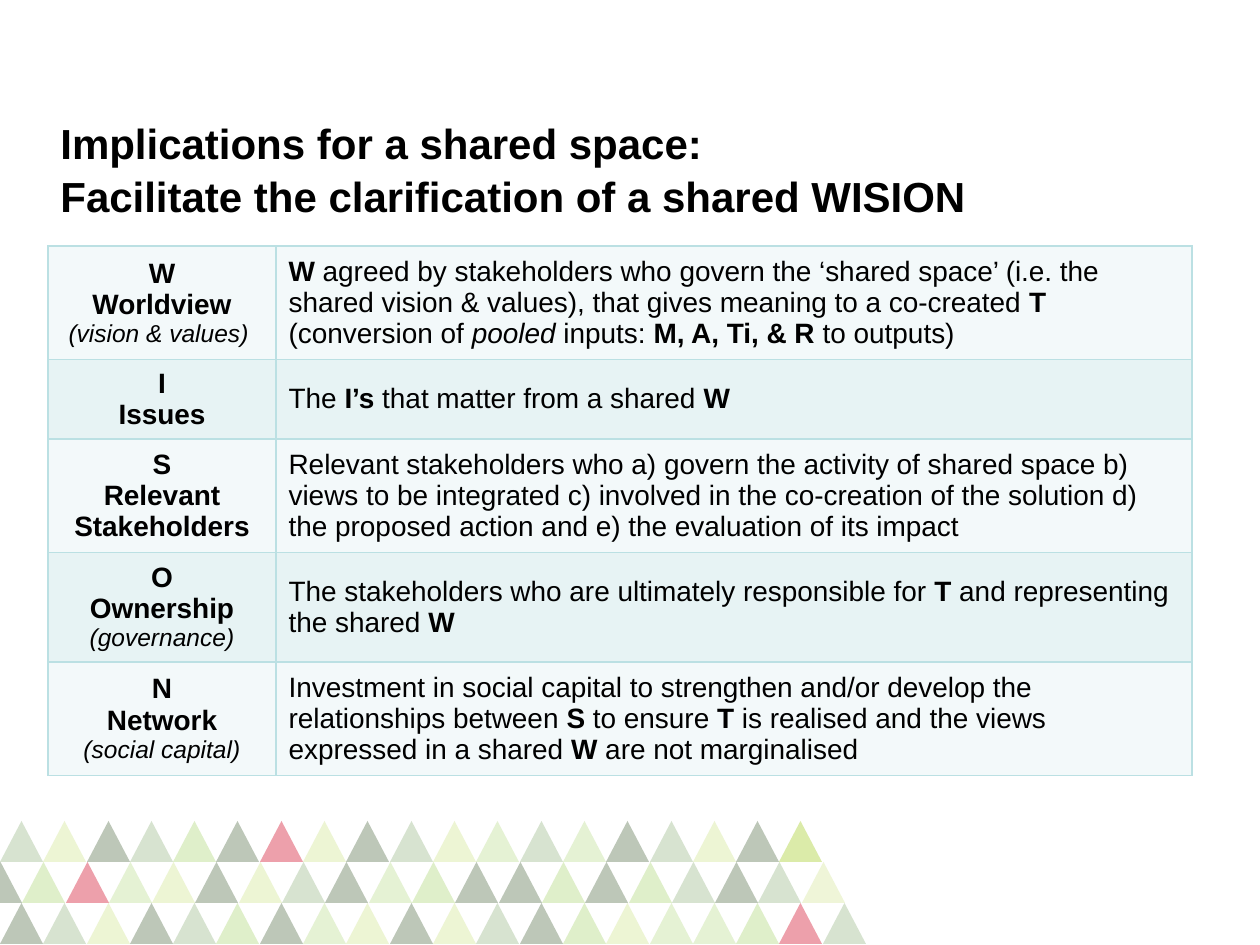
from dataclasses import dataclass
from typing import NamedTuple

from lxml import etree
from pptx import Presentation
from pptx.dml.color import RGBColor
from pptx.enum.shapes import MSO_SHAPE
from pptx.enum.text import MSO_ANCHOR, PP_ALIGN
from pptx.oxml.ns import qn
from pptx.util import Emu, Pt

TRIANGLE = MSO_SHAPE.ISOSCELES_TRIANGLE
MIDDLE = MSO_ANCHOR.MIDDLE
LEFT, CENTER = PP_ALIGN.LEFT, PP_ALIGN.CENTER
PX = 914400 // 126


@dataclass(frozen=True)
class Theme:
    font: str = "Arial"
    ink: str = "000000"
    border: str = "BBE0E3"
    bands: tuple[str, str] = ("F3F9FA", "E7F3F4")
    title: int = 24
    body: int = 16
    note: int = 14


class Tint(NamedTuple):
    color: str
    opacity: int


class Run(NamedTuple):
    text: str
    bold: bool = False
    italic: bool = False


class Row(NamedTuple):
    height: int
    heading: list[str]
    note: str
    runs: list[Run]


THEME = Theme()
TINTS = {
    "D": Tint("264715", 30),
    "M": Tint("4A812C", 22),
    "L": Tint("A7CD28", 20),
    "l": Tint("A7CD28", 18),
    "Y": Tint("A7CD28", 40),
    "G": Tint("81C12C", 25),
    "g": Tint("81C12C", 20),
    "R": Tint("D3122E", 40),
}
# Each row of triangles: left edge in px, then one tint key per triangle
TRIANGLE_ROWS = [
    (0, "MLDMGDRLDMLgMgDMLDY"),
    (-21, "DGRgLDLMDgGDDGDGMDMl"),
    (0, "DMLDMGDgLDLMDGLggGRM"),
]
TITLE = "Implications for a shared space: \vFacilitate the clarification of a shared WISION"
COLUMNS = (228, 916)
ROWS = [
    Row(106, ["W", "Worldview"], "(vision & values) ", [
        Run("W", bold=True),
        Run(" agreed by stakeholders who govern the ‘shared space’ (i.e. the shared "
            "vision & values), that gives meaning to a co-created "),
        Run("T ", bold=True),
        Run("(conversion of "),
        Run("pooled", italic=True),
        Run(" inputs: "),
        Run("M, A, Ti, & R ", bold=True),
        Run("to outputs)"),
    ]),
    Row(75, ["I", "Issues"], "", [
        Run("The "),
        Run("I’s", bold=True),
        Run(" that matter from a shared "),
        Run("W", bold=True),
    ]),
    Row(106, ["S", "Relevant", "Stakeholders"], "", [
        Run("Relevant stakeholders who a) govern the activity of shared space b) views to "
            "be integrated c) involved in the co-creation of the solution d) the proposed "
            "action and e) the evaluation of its impact"),
    ]),
    Row(102, ["O", "Ownership"], "(governance)", [
        Run("The stakeholders who are ultimately responsible for "),
        Run("T", bold=True),
        Run(" and representing the shared "),
        Run("W", bold=True),
    ]),
    Row(106, ["N", "Network"], "(social capital)", [
        Run("Investment in social capital to strengthen and/or develop the relationships "
            "between "),
        Run("S", bold=True),
        Run(" to ensure "),
        Run("T", bold=True),
        Run(" is realised and the views expressed in a shared "),
        Run("W", bold=True),
        Run(" are not marginalised"),
    ]),
]


def px(n: int) -> Emu:
    return Emu(n * PX)


def style(p, size: int, bold=None, italic=None, align=LEFT) -> None:
    p.alignment = align
    f = p.font
    f.name, f.size, f.bold, f.italic = THEME.font, Pt(size), bold, italic
    f.color.rgb = RGBColor.from_string(THEME.ink)


def add_triangle(s, x: int, y: int, tint: Tint) -> None:
    sp = s.shapes.add_shape(TRIANGLE, px(x), px(y), px(43), px(41))
    sp.shadow.inherit = False
    sp.line.fill.background()
    sp.fill.solid()
    sp.fill.fore_color.rgb = RGBColor.from_string(tint.color)
    color = sp.fill._xPr.find(f".//{qn('a:srgbClr')}")
    etree.SubElement(color, qn("a:alpha"), val=str(tint.opacity * 1000))


def add_triangles(s) -> None:
    for i, (left, keys) in enumerate(TRIANGLE_ROWS):
        for j, key in enumerate(keys):
            add_triangle(s, left + round(43.3 * j), 821 + 41 * i, TINTS[key])


def add_title(s) -> None:
    tf = s.shapes.add_textbox(px(48), px(120), px(1164), px(96)).text_frame
    tf.word_wrap = True
    tf.vertical_anchor = MIDDLE
    p = tf.paragraphs[0]
    p.text = TITLE
    p.line_spacing = 1.05
    style(p, THEME.title, bold=True)


def format_cell(cell, fill: str) -> None:
    """Anchor the text in the middle, then draw all four borders and the fill."""
    cell.vertical_anchor = MIDDLE
    tc_pr = cell._tc.get_or_add_tcPr()
    for side in ("lnL", "lnR", "lnT", "lnB"):
        ln = etree.SubElement(tc_pr, qn(f"a:{side}"), w=str(Pt(1)))
        solid = etree.SubElement(ln, qn("a:solidFill"))
        etree.SubElement(solid, qn("a:srgbClr"), val=THEME.border)
    cell.fill.solid()
    cell.fill.fore_color.rgb = RGBColor.from_string(fill)


def write_heading(tf, row: Row) -> None:
    tf.text = "\n".join(row.heading)
    for p in tf.paragraphs:
        style(p, THEME.body, bold=True, align=CENTER)
    if row.note:
        p = tf.add_paragraph()
        p.text = row.note
        style(p, THEME.note, italic=True, align=CENTER)


def write_runs(tf, runs: list[Run]) -> None:
    p = tf.paragraphs[0]
    style(p, THEME.body)
    for run in runs:
        r = p.add_run()
        r.text = run.text
        r.font.bold, r.font.italic = run.bold, run.italic


def add_wision_table(s) -> None:
    height = sum(row.height for row in ROWS)
    table = s.shapes.add_table(len(ROWS), len(COLUMNS), px(48), px(246),
                               px(sum(COLUMNS)), px(height)).table
    table.first_row = table.horz_banding = False
    for column, width in zip(table.columns, COLUMNS):
        column.width = px(width)
    for i, row in enumerate(ROWS):
        table.rows[i].height = px(row.height)
        heading, description = table.rows[i].cells
        write_heading(heading.text_frame, row)
        write_runs(description.text_frame, row.runs)
        for cell in (heading, description):
            format_cell(cell, THEME.bands[i % 2])


def main() -> None:
    prs = Presentation()
    prs.slide_width, prs.slide_height = px(1260), px(945)
    s = prs.slides.add_slide(prs.slide_layouts[6])
    add_triangles(s)
    add_title(s)
    add_wision_table(s)
    prs.save("out.pptx")


if __name__ == "__main__":
    main()
